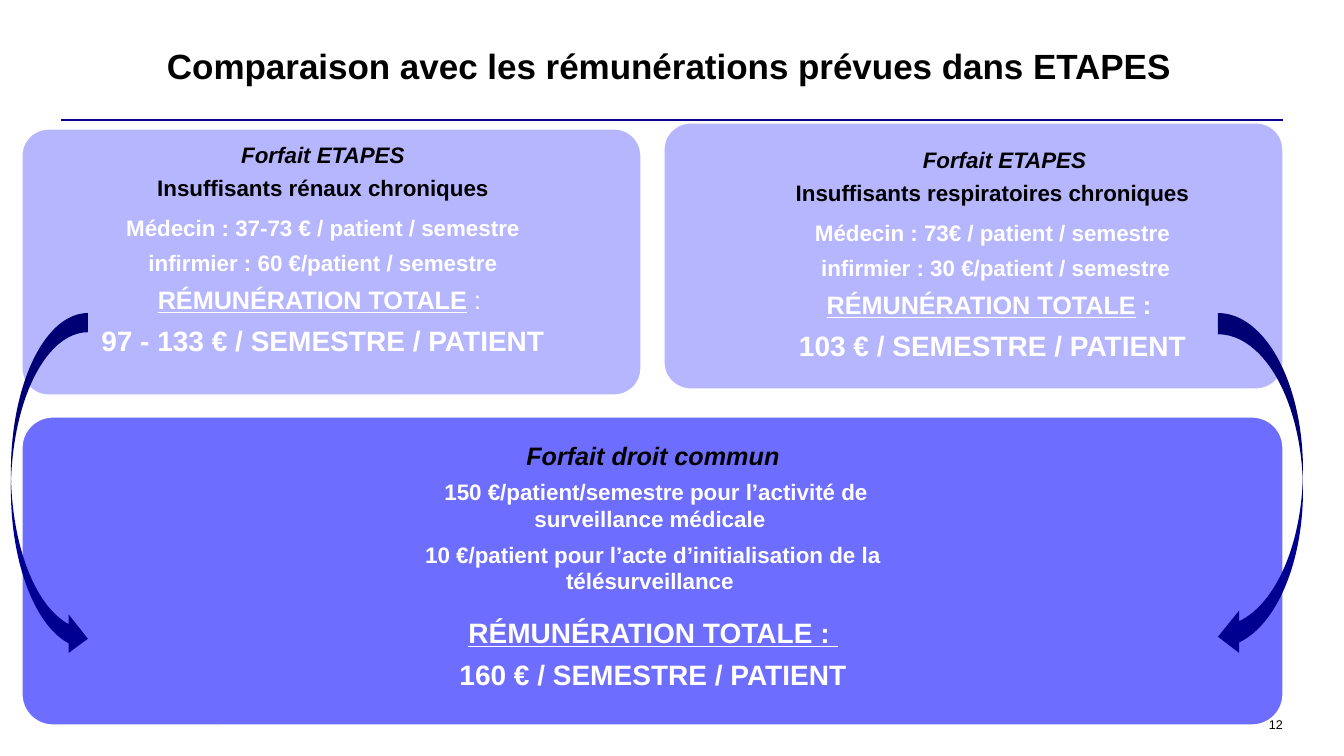
import pptx
import pptx.util
import pptx.dml.color
import pptx.enum.shapes
import pptx.enum.text
import pptx.oxml

PX = 914400 / 100.8  # EMU per px

THEME = {
    "font": "Arial",
    "black": "000000", "white": "FFFFFF", "rule": "0A0091", "arrow": "000091",
    "pale": "B6B6FF", "strong": "6D6DFF",
    "title": 25, "total": 20, "heading": 18, "body": 16, "number": 9,
}
ALIGN = pptx.enum.text.PP_ALIGN
ANCHOR = pptx.enum.text.MSO_ANCHOR
SHAPE = pptx.enum.shapes.MSO_SHAPE


def px(*lengths):
    return [pptx.util.Emu(round(length * PX)) for length in lengths]


def write(frame, paragraphs, anchor=ANCHOR.TOP):
    """Each paragraph is (layout values, left indent in px, runs)."""
    frame_format = {"word_wrap": True, "vertical_anchor": anchor, "margin_left": 0,
                    "margin_top": 0, "margin_right": 0, "margin_bottom": 0}
    for name, value in frame_format.items():
        setattr(frame, name, value)
    for index, (layout, indent, runs) in enumerate(paragraphs):
        paragraph = frame.add_paragraph() if index else frame.paragraphs[0]
        if indent:
            paragraph._p.get_or_add_pPr().set("marL", str(px(indent)[0]))
        for name, value in layout.items():
            setattr(paragraph, name, value)
        if index == 0:
            paragraph.space_before = pptx.util.Pt(0)
        for text, size, color, style in runs:
            run = paragraph.add_run()
            run.text = text
            font_format = {"name": THEME["font"], "size": pptx.util.Pt(THEME[size]),
                           "bold": "b" in style, "italic": "i" in style,
                           "underline": "u" in style}
            for name, value in font_format.items():
                setattr(run.font, name, value)
            run.font.color.rgb = pptx.dml.color.RGBColor.from_string(THEME[color])


deck = pptx.Presentation()
deck.slide_width, deck.slide_height = px(1344, 756)
slide = deck.slides.add_slide(deck.slide_layouts[5])
shapes = slide.shapes

# Paragraph layouts
pt = pptx.util.Pt
plain = {"alignment": ALIGN.LEFT, "space_before": pt(0)}
number_layout = {"alignment": ALIGN.RIGHT}
tight = {"alignment": ALIGN.CENTER, "line_spacing": 0.9,
         "space_before": pt(0), "space_after": pt(6.3)}
spaced = {"alignment": ALIGN.CENTER, "space_before": pt(3), "space_after": pt(3)}
before_total = {**spaced, "space_after": pt(12)}

# Title and rule
title = shapes.title
title.left, title.top, title.width, title.height = px(167, 22, 1116, 88)
write(title.text_frame, [(plain, 0, [
    ("Comparaison avec les rémunérations prévues dans ETAPES", "title", "black", "b")])],
    ANCHOR.MIDDLE)

rule = shapes.add_connector(pptx.enum.shapes.MSO_CONNECTOR.STRAIGHT, *px(61, 120, 1283, 120))
rule.line.width = pt(1.75)
rule.line.color.rgb = pptx.dml.color.RGBColor.from_string(THEME["rule"])
rule._element.spPr.append(pptx.oxml.parse_xml(
    '<a:effectLst xmlns:a="http://schemas.openxmlformats.org/drawingml/2006/main"/>'))

# Slide number
page_number = shapes.add_textbox(*px(1247, 717, 36, 15))
write(page_number.text_frame, [(number_layout, 0, [("12", "number", "black", "")])],
      ANCHOR.BOTTOM)


# Wording of the three packages
common_package = [
    (spaced, 0, [("Forfait droit commun", "heading", "black", "bi")]),
    (spaced, 0, [(" 150 €/patient/semestre pour l’activité de surveillance médicale ",
                  "body", "white", "b")]),
    (before_total, 0, [("10 €/patient pour l’acte d’initialisation de la télésurveillance ",
                        "body", "white", "b")]),
    (spaced, 0, [("RÉMUNÉRATION TOTALE : ", "total", "white", "bu")]),
    (spaced, 0, [("160 € / SEMESTRE / PATIENT", "total", "white", "b")]),
]
etapes_packages = [
    [
        (tight, indent, [("Forfait ETAPES", "body", "black", "bi")]),
        (tight, 0, [(patients, "body", "black", "b")]),
        (spaced, 0, [(doctor, "body", "white", "b")]),
        (spaced, 0, [(nurse, "body", "white", "b")]),
        (spaced, 0, [("RÉMUNÉRATION TOTALE", "heading", "white", "bu"),
                     (" : ", "heading", "white", colon_style)]),
        (spaced, 0, [(total, "total", "white", "b")]),
    ]
    for indent, patients, doctor, nurse, colon_style, total in [
        (0, "Insuffisants rénaux chroniques", "Médecin : 37-73 € / patient / semestre",
         " infirmier : 60 €/patient / semestre ", "", "97 - 133 € / SEMESTRE / PATIENT"),
        (24, "Insuffisants respiratoires chroniques", "Médecin : 73€ / patient / semestre",
         " infirmier : 30 €/patient / semestre", "b", "103 € / SEMESTRE / PATIENT"),
    ]
]

# Panels with their text: panel box, fill, text box, wording
for panel_box, fill, text_box, wording in [
    ((22, 417, 1261, 308), "strong", (378, 440, 550, 270), common_package),
    ((22, 129, 619, 266), "pale", (93, 144, 460, 230), etapes_packages[0]),
    ((664, 123, 619, 266), "pale", (691, 149, 603, 230), etapes_packages[1]),
]:
    panel = shapes.add_shape(SHAPE.ROUNDED_RECTANGLE, *px(*panel_box))
    panel.adjustments[0] = 0.1
    panel.shadow.inherit = False
    panel.fill.solid()
    panel.fill.fore_color.rgb = pptx.dml.color.RGBColor.from_string(THEME[fill])
    panel.line.color.rgb = pptx.dml.color.RGBColor.from_string(THEME["white"])
    panel.line.width = pt(0.85)
    write(shapes.add_textbox(*px(*text_box)).text_frame, wording)

# Curved arrows from the ETAPES packages to the common one
for arrow_box, mirrored in [((11, 313, 77, 345), True), ((1218, 313, 85, 345), False)]:
    arrow = shapes.add_shape(SHAPE.CURVED_LEFT_ARROW, *px(*arrow_box))
    arrow.shadow.inherit = False
    arrow.fill.solid()
    arrow.fill.fore_color.rgb = pptx.dml.color.RGBColor.from_string(THEME["arrow"])
    arrow.line.fill.background()
    if mirrored:
        arrow._element.spPr.xfrm.set("flipH", "1")

deck.save("out.pptx")
